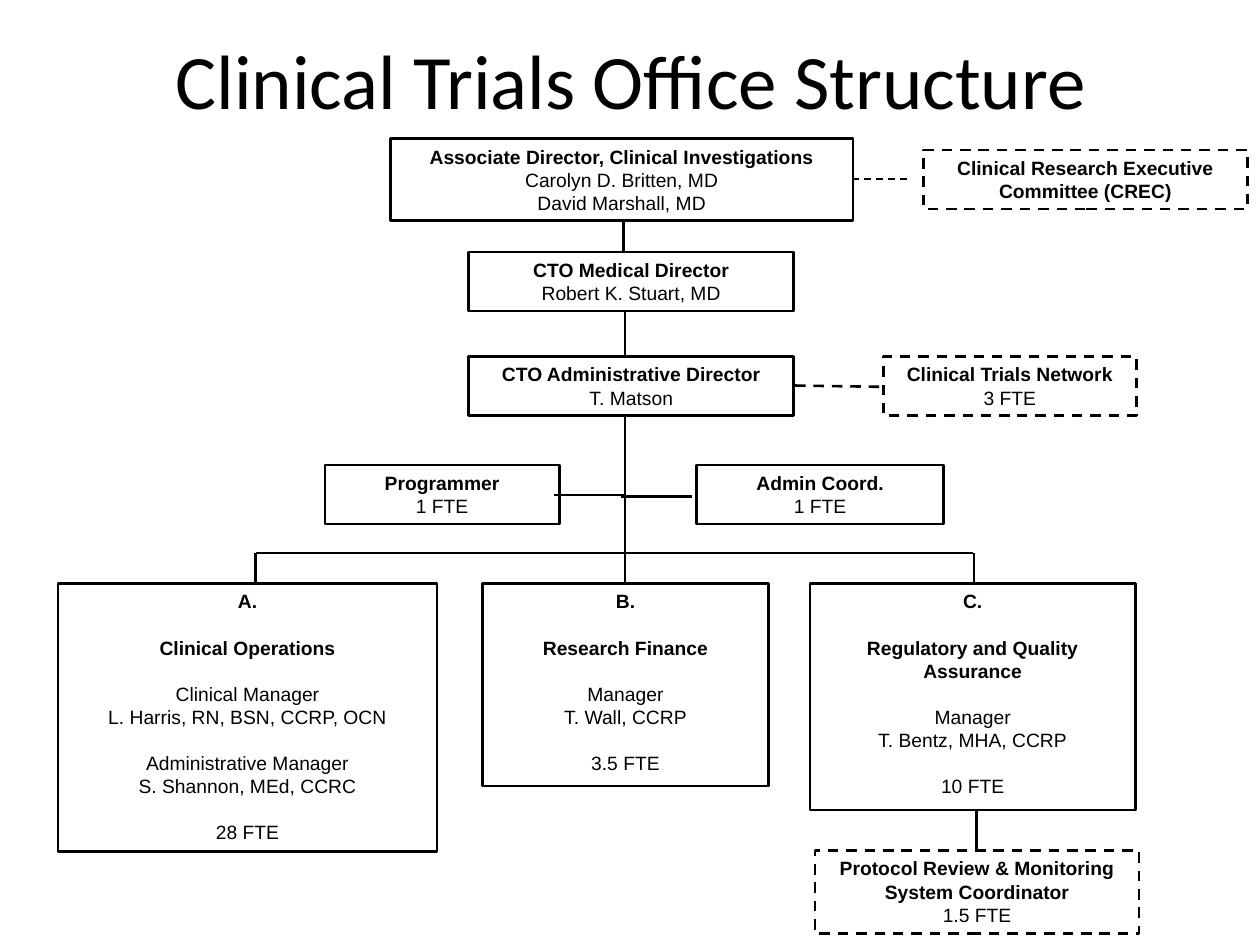
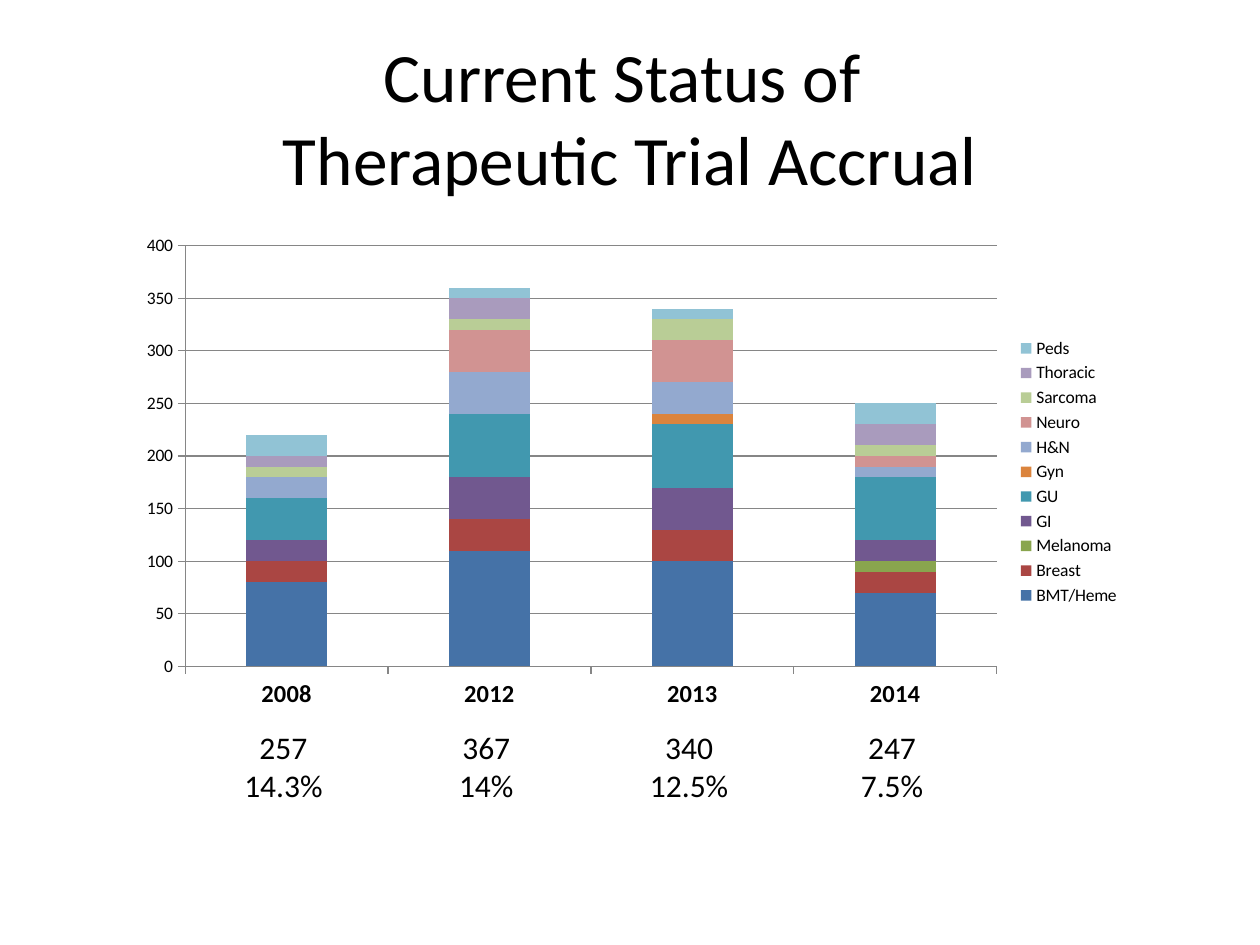
"""Build two slides on the structure and accrual of a clinical trials office."""
import lxml.etree
import pptx
import pptx.chart.data
import pptx.dml.color
import pptx.enum.chart
import pptx.enum.dml
import pptx.enum.shapes
import pptx.enum.text
import pptx.oxml
import pptx.oxml.ns
import pptx.util

Inches = pptx.util.Inches
Pt = pptx.util.Pt
RGBColor = pptx.dml.color.RGBColor
BLACK = RGBColor(0x00, 0x00, 0x00)
GRAY = RGBColor(0x86, 0x86, 0x86)
BLUE = RGBColor(0x45, 0x72, 0xA7)
RED = RGBColor(0xAA, 0x46, 0x43)
GREEN = RGBColor(0x89, 0xA5, 0x4E)
PURPLE = RGBColor(0x71, 0x58, 0x8F)
TEAL = RGBColor(0x41, 0x98, 0xAF)
ORANGE = RGBColor(0xDB, 0x84, 0x3D)
PALE_BLUE = RGBColor(0x93, 0xA9, 0xCF)
PALE_RED = RGBColor(0xD1, 0x93, 0x92)
PALE_GREEN = RGBColor(0xB9, 0xCD, 0x96)
PALE_PURPLE = RGBColor(0xA9, 0x9B, 0xBD)
PALE_TEAL = RGBColor(0x91, 0xC3, 0xD5)

BOXES = [
    ((3.1, 1.1, 3.67, 0.65), [["Associate Director, Clinical Investigations",
                               "Carolyn D. Britten, MD", "David Marshall, MD"]], 1, False),
    ((7.33, 1.19, 2.57, 0.47), [["Clinical Research Executive Committee (CREC)"]], 1, True),
    ((3.72, 2, 2.58, 0.47), [["CTO Medical Director", "Robert K. Stuart, MD"]], 1, False),
    ((3.72, 2.83, 2.58, 0.47), [["CTO Administrative Director", "T. Matson"]], 1, False),
    ((7.01, 2.83, 2.01, 0.47), [["Clinical Trials Network", "3 FTE"]], 1, True),
    ((2.58, 3.69, 1.86, 0.47), [["Programmer", "1 FTE"]], 1, False),
    ((5.53, 3.69, 1.96, 0.47), [["Admin Coord.", "1 FTE"]], 1, False),
    ((0.46, 4.63, 3.01, 2.13), [["A."], ["Clinical Operations"],
                                ["Clinical Manager", "L. Harris, RN, BSN, CCRP, OCN"],
                                ["Administrative Manager", "S. Shannon, MEd, CCRC"],
                                ["28 FTE"]], 2, False),
    ((3.83, 4.63, 2.27, 1.61), [["B."], ["Research Finance"],
                                ["Manager", "T. Wall, CCRP"], ["3.5 FTE"]], 2, False),
    ((6.43, 4.63, 2.58, 1.8), [["C."], ["Regulatory and Quality Assurance"],
                               ["Manager", "T. Bentz, MHA, CCRP"], ["10 FTE"]], 2, False),
    ((6.47, 6.75, 2.57, 0.66), [["Protocol Review & Monitoring System Coordinator",
                                 "1.5 FTE"]], 1, True),
]
LINKS = [
    (4.95, 1.75, 4.95, 2), (4.96, 2.46, 4.96, 2.83),
    (4.96, 3.3, 4.96, 4.39), (4.96, 4.39, 4.96, 4.63),
    (4.4, 3.93, 4.96, 3.93), (4.93, 3.94, 5.49, 3.94), (2.03, 4.39, 7.72, 4.39),
    (2.03, 4.39, 2.03, 4.63), (7.73, 4.39, 7.73, 4.62), (7.75, 6.42, 7.75, 6.74),
]
YEARS = ["2008", "2012", "2013", "2014"]
TRIALS = [
    ("BMT/Heme", (80, 110, 100, 70), BLUE),
    ("Breast", (20, 30, 30, 20), RED),
    ("Melanoma", (0, 0, 0, 10), GREEN),
    ("GI", (20, 40, 40, 20), PURPLE),
    ("GU", (40, 60, 60, 60), TEAL),
    ("Gyn", (0, 0, 10, 0), ORANGE),
    ("H&N", (20, 40, 30, 10), PALE_BLUE),
    ("Neuro", (0, 40, 40, 10), PALE_RED),
    ("Sarcoma", (10, 10, 20, 10), PALE_GREEN),
    ("Thoracic", (10, 20, 0, 20), PALE_PURPLE),
    ("Peds", (20, 10, 10, 20), PALE_TEAL),
]
TOTALS = [("257", "14.3%"), ("367", "14%"), ("340", "12.5%"), ("247", "7.5%")]


class Deck:
    def __init__(self):
        self.show = pptx.Presentation()
        self.show.slide_width, self.show.slide_height = Inches(10), Inches(7.5)
        self.slide = None

    def font(self, font, size, bold=False, face="Calibri"):
        font.name, font.size, font.bold = face, Pt(size), bold
        font.color.rgb = BLACK

    def stroke(self, line, dash=False, width=1.5):
        line.color.rgb, line.width = BLACK, Pt(width)
        if dash:
            line.dash_style = pptx.enum.dml.MSO_LINE.DASH

    def page(self, text, left, top, size):
        self.slide = self.show.slides.add_slide(self.show.slide_layouts[5])
        title = self.slide.shapes.title
        title.left, title.top = Inches(left), Inches(top)
        title.width, title.height = Inches(9), Inches(1.25)
        frame = title.text_frame
        frame.text = text
        frame.auto_size = pptx.enum.text.MSO_AUTO_SIZE.NONE
        frame.vertical_anchor = pptx.enum.text.MSO_ANCHOR.MIDDLE
        frame.paragraphs[0].alignment = pptx.enum.text.PP_ALIGN.CENTER
        self.font(frame.paragraphs[0].font, size)

    def lines(self, frame, texts):
        frame.text = "\n".join(texts)
        for para in frame.paragraphs:
            para.alignment = pptx.enum.text.PP_ALIGN.CENTER
        return frame.paragraphs

    def box(self, place, groups, heads, dash):
        shape = self.slide.shapes.add_shape(
            pptx.enum.shapes.MSO_SHAPE.RECTANGLE, *map(Inches, place))
        shape.shadow.inherit = False
        shape.fill.background()
        self.stroke(shape.line, dash)
        frame = shape.text_frame
        frame.word_wrap = True
        frame.vertical_anchor = pptx.enum.text.MSO_ANCHOR.TOP
        frame.margin_left = frame.margin_right = Inches(0.09)
        frame.margin_top = frame.margin_bottom = Inches(0.05)
        texts = [text for group in groups for text in group]
        gaps = [at > 0 and spot == 0
                for at, group in enumerate(groups) for spot in range(len(group))]
        for spot, (para, gap) in enumerate(zip(self.lines(frame, texts), gaps)):
            self.font(para.font, 11, spot < heads, "Arial")
            para.line_spacing = Pt(13.2)
            para.space_before = Pt(13.2 if gap else 0)

    def link(self, ends, dash=False, width=1.5):
        line = self.slide.shapes.add_connector(
            pptx.enum.shapes.MSO_CONNECTOR.STRAIGHT, *map(Inches, ends))
        self.stroke(line.line, dash, width)
        lxml.etree.SubElement(line.element.spPr, pptx.oxml.ns.qn("a:effectLst"))

    def note(self, place, texts):
        frame = self.slide.shapes.add_textbox(*map(Inches, place)).text_frame
        frame.word_wrap = True
        for para in self.lines(frame, texts):
            self.font(para.font, 18)

    def chart(self, place, cats, rows):
        data = pptx.chart.data.CategoryChartData()
        data.categories = cats
        for name, values, _ in rows:
            data.add_series(name, values)
        chart = self.slide.shapes.add_chart(
            pptx.enum.chart.XL_CHART_TYPE.COLUMN_STACKED, *map(Inches, place), data).chart
        self.font(chart.font, 10)
        chart.has_title = False
        chart.has_legend = True
        chart.legend.position = pptx.enum.chart.XL_LEGEND_POSITION.RIGHT
        chart.legend.include_in_layout = False
        plot = chart.plots[0]
        plot.gap_width, plot.overlap, plot.vary_by_categories = 150, 100, False
        for series, (_, _, color) in zip(plot.series, rows):
            series.format.fill.solid()
            series.format.fill.fore_color.rgb = color
        scale = chart.value_axis
        scale.minimum_scale, scale.maximum_scale, scale.major_unit = 0, 400, 50
        scale.has_major_gridlines = True
        for axis in (scale, chart.category_axis):
            axis.major_tick_mark = pptx.enum.chart.XL_TICK_MARK.OUTSIDE
            axis.format.line.color.rgb = GRAY
        scale.major_gridlines.format.line.color.rgb = GRAY
        self.font(chart.category_axis.tick_labels.font, 14, True)
        wide, high = place[2:]
        self.inset(chart, x=0.47 / wide, y=0.16 / high, w=6.44 / wide, h=3.34 / high)

    def inset(self, chart, **sides):
        area = chart.element.chart.plotArea
        for old in area.findall(pptx.oxml.ns.qn("c:layout")):
            area.remove(old)
        parts = "".join(f'<c:{side} val="{size}"/>' for side, size in sides.items())
        area.insert(0, pptx.oxml.parse_xml(
            f'<c:layout {pptx.oxml.ns.nsdecls("c")}><c:manualLayout>'
            '<c:layoutTarget val="inner"/><c:xMode val="edge"/><c:yMode val="edge"/>'
            f'{parts}</c:manualLayout></c:layout>'))


def main():
    deck = Deck()
    deck.page("Clinical Trials Office Structure", 0.51, 0, 44)
    for box in BOXES:
        deck.box(*box)
    for ends in LINKS:
        deck.link(ends)
    deck.link((6.31, 3.06, 6.98, 3.07), dash=True)
    deck.link((6.76, 1.42, 7.24, 1.42), dash=True, width=1)

    deck.page("Current Status of \vTherapeutic Trial Accrual", 0.5, 0.3, 39.6)
    deck.chart((1, 1.79, 7.99, 3.91), YEARS, TRIALS)
    for spot, texts in enumerate(TOTALS):
        deck.note((1.75 + 1.61 * spot, 5.73, 1, 0.71), texts)
    deck.show.save("out.pptx")


if __name__ == "__main__":
    main()
